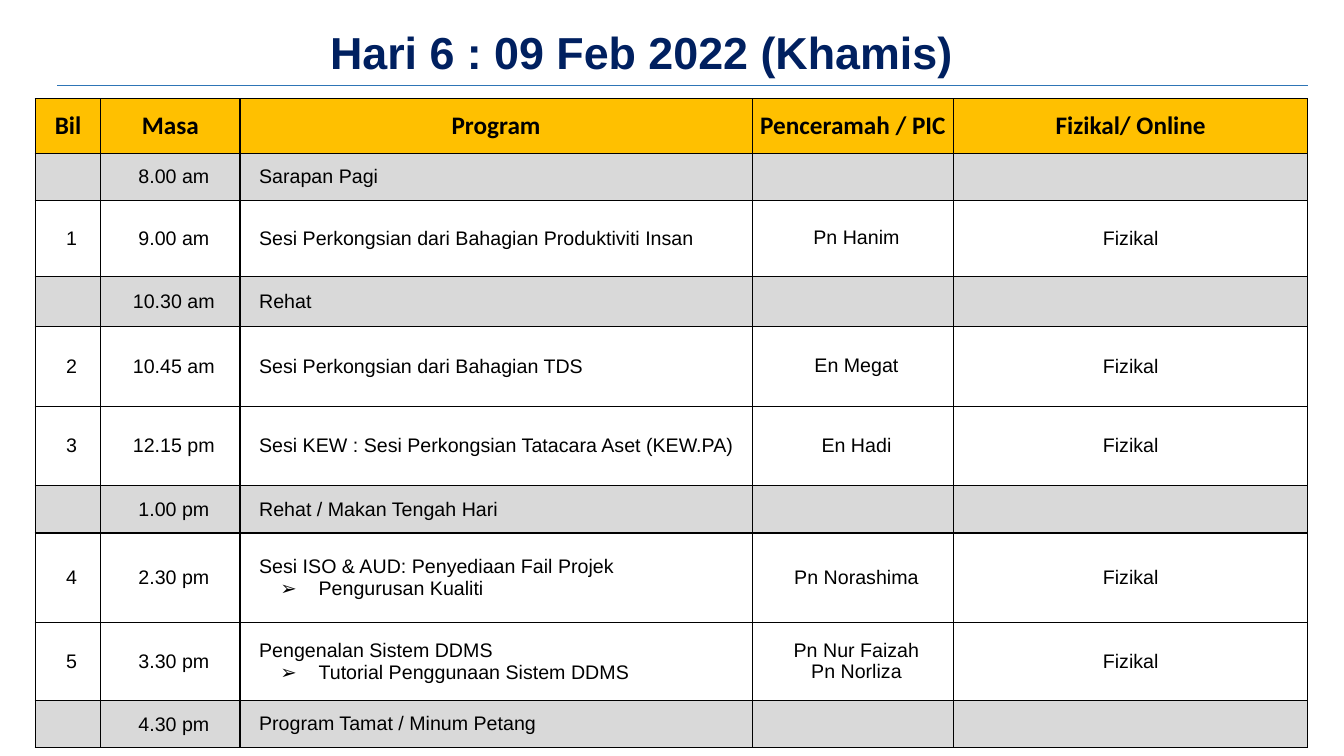
from lxml import etree
from pptx import Presentation
from pptx.dml.color import RGBColor
from pptx.enum.shapes import MSO_CONNECTOR
from pptx.enum.text import MSO_ANCHOR, PP_ALIGN
from pptx.oxml.ns import qn
from pptx.util import Emu, Inches, Pt

TITLE = "Hari 6 : 09 Feb 2022 (Khamis)"
HEADINGS = ["Bil", "Masa", "Program", "Penceramah / PIC", "Fizikal/ Online"]
# Height, number, time, programme lines, speakers, mode; breaks have no number
SESSIONS = [
    (0.47, "", "8.00 am", ["Sarapan Pagi"], [], ""),
    (0.75, "1", "9.00 am", ["Sesi Perkongsian dari Bahagian Produktiviti Insan"],
     ["Pn Hanim"], "Fizikal"),
    (0.5, "", "10.30 am", ["Rehat"], [], ""),
    (0.79, "2", "10.45 am", ["Sesi Perkongsian dari Bahagian TDS"], ["En Megat"], "Fizikal"),
    (0.79, "3", "12.15 pm", ["Sesi KEW : Sesi Perkongsian Tatacara Aset (KEW.PA)"],
     ["En Hadi"], "Fizikal"),
    (0.47, "", "1.00 pm", ["Rehat / Makan Tengah Hari"], [], ""),
    (0.89, "4", "2.30 pm", ["Sesi ISO & AUD: Penyediaan Fail Projek", "Pengurusan Kualiti"],
     ["Pn Norashima"], "Fizikal"),
    (0.77, "5", "3.30 pm", ["Pengenalan Sistem DDMS", "Tutorial Penggunaan Sistem DDMS"],
     ["Pn Nur Faizah", "Pn Norliza"], "Fizikal"),
    (0.47, "", "4.30 pm", ["Program Tamat / Minum Petang"], [], ""),
]
COLUMN_WIDTHS = [0.65, 1.38, 5.08, 2, 3.51]
HEADING_HEIGHT = 0.54
PROGRAM_COLUMN = 2
CENTRE_INDENTS = [0.07, 0.07, 0, 0.07, 0]

NAVY = RGBColor(0x00, 0x20, 0x60)
BLUE = RGBColor(0x2E, 0x75, 0xB6)
BLACK = RGBColor(0, 0, 0)
WHITE = RGBColor(255, 255, 255)
AMBER = RGBColor(0xFF, 0xC0, 0x00)
GREY = RGBColor(0xD9, 0xD9, 0xD9)
CENTER, LEFT = PP_ALIGN.CENTER, PP_ALIGN.LEFT
MIDDLE = MSO_ANCHOR.MIDDLE


def add_span(para, text, font, size, color, bold=False):
    span = para.add_run()
    span.text = text
    span.font.name = font
    span.font.size = Pt(size)
    span.font.bold = bold
    span.font.color.rgb = color


def indent(para, left, first=0, bullet=None):
    properties = para._p.get_or_add_pPr()
    properties.set("marL", str(Inches(left)))
    properties.set("indent", str(Inches(first)))
    if bullet:
        etree.SubElement(properties, qn("a:buFont"), typeface="Arial")
        etree.SubElement(properties, qn("a:buChar"), char=bullet)


def style_cell(cell, color):
    """Set borders, fill, insets and anchor."""
    properties = cell._tc.get_or_add_tcPr()
    for side in ("a:lnL", "a:lnR", "a:lnT", "a:lnB"):
        border = etree.SubElement(properties, qn(side), w=str(Pt(1)))
        fill = etree.SubElement(border, qn("a:solidFill"))
        etree.SubElement(fill, qn("a:srgbClr"), val=str(BLACK))
    cell.fill.solid()
    cell.fill.fore_color.rgb = color
    cell.margin_left = cell.margin_right = cell.margin_top = cell.margin_bottom = 0
    cell.vertical_anchor = MIDDLE


def cell_paragraphs(cell, lines):
    """Yield one paragraph with each line of text."""
    frame = cell.text_frame
    for number, line in enumerate(lines):
        yield number, (frame.add_paragraph() if number else frame.paragraphs[0]), line


def fill_session(table, row, session):
    number, time, program, speakers, mode = session
    contents = [[number], [time], program, speakers, [mode]]
    for column, lines in enumerate(contents):
        cell = table.cell(row, column)
        style_cell(cell, WHITE if number else GREY)
        for position, para, line in cell_paragraphs(cell, filter(None, lines)):
            if column == PROGRAM_COLUMN:
                para.alignment = LEFT
                if position:
                    indent(para, 0.78, -0.38, "➢")
                else:
                    indent(para, 0.19)
            else:
                para.alignment = CENTER
                para.line_spacing = Pt(15 if speakers and column == 3 else 16)
                indent(para, CENTRE_INDENTS[column])
            add_span(para, line, "Arial", 14, BLACK)


def main():
    deck = Presentation()
    deck.slide_width, deck.slide_height = Inches(13.33), Inches(7.5)
    page = deck.slides.add_slide(deck.slide_layouts[5])

    rule = page.shapes.add_connector(MSO_CONNECTOR.STRAIGHT, Inches(0.57), Inches(0.85),
                                     Inches(12.97), Inches(0.85))
    rule.line.color.rgb = BLUE
    rule.line.width = Pt(0.5)
    etree.SubElement(rule._element.spPr, qn("a:effectLst"))

    title = page.shapes.title
    title.left, title.top = Inches(1.9), Inches(0.24)
    title.width, title.height = Inches(8.93), Inches(0.54)
    title.text_frame.vertical_anchor = MIDDLE
    para = title.text_frame.paragraphs[0]
    para.alignment = CENTER
    add_span(para, TITLE, "Arial", 32, NAVY, True)

    heights = [HEADING_HEIGHT] + [session[0] for session in SESSIONS]
    frame = page.shapes.add_table(len(heights), len(HEADINGS), Inches(0.35), Inches(0.98),
                                  Inches(sum(COLUMN_WIDTHS)), Inches(sum(heights)))
    table = frame.table
    for column, width in zip(table.columns, COLUMN_WIDTHS):
        column.width = Emu(Inches(width))
    for row, height in zip(table.rows, heights):
        row.height = Emu(Inches(height))

    for column, heading in enumerate(HEADINGS):
        cell = table.cell(0, column)
        style_cell(cell, AMBER)
        para = cell.text_frame.paragraphs[0]
        para.alignment = CENTER
        add_span(para, heading, "Calibri", 18, BLACK, True)
    for row, session in enumerate(SESSIONS, start=1):
        fill_session(table, row, session[1:])

    deck.save("out.pptx")


if __name__ == "__main__":
    main()
